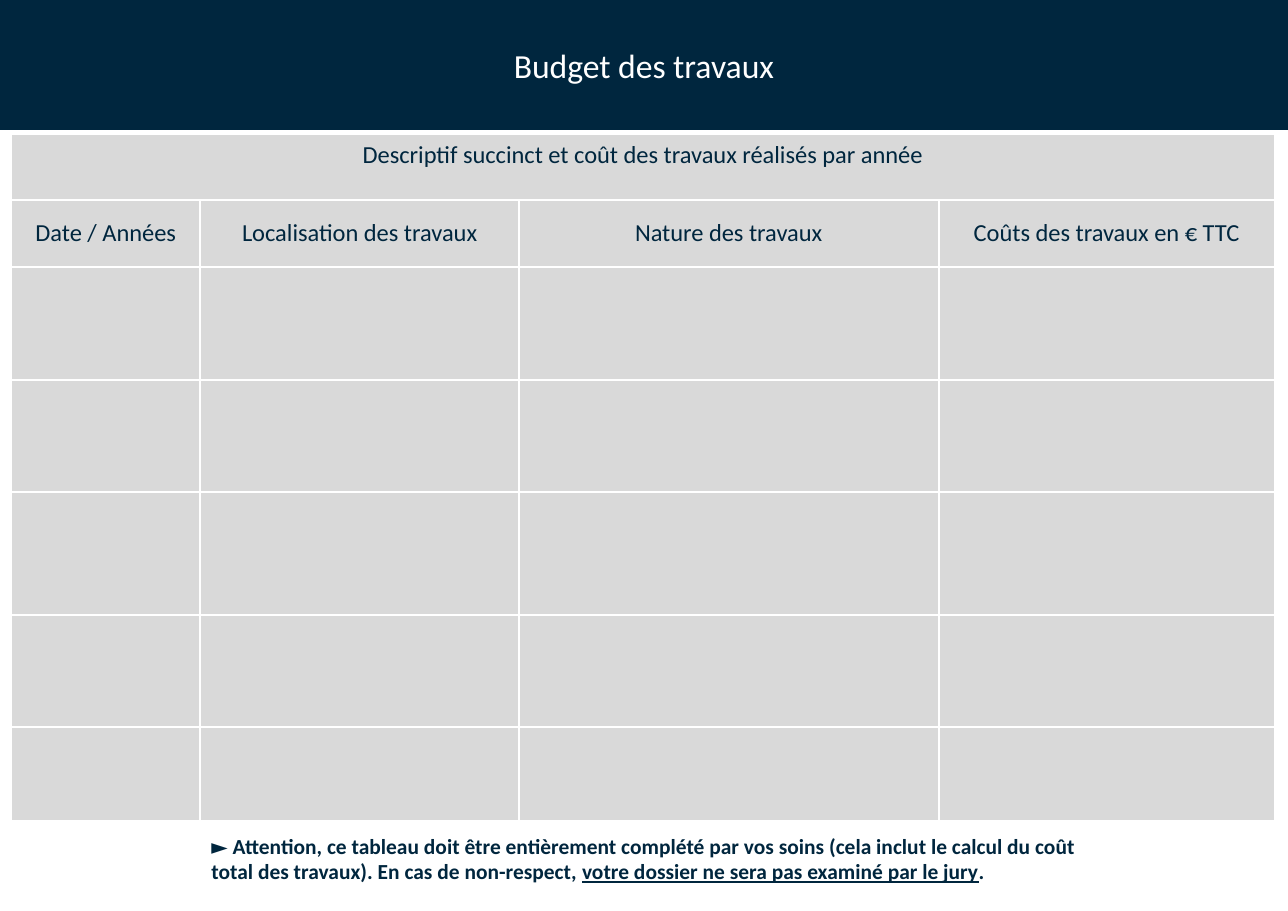
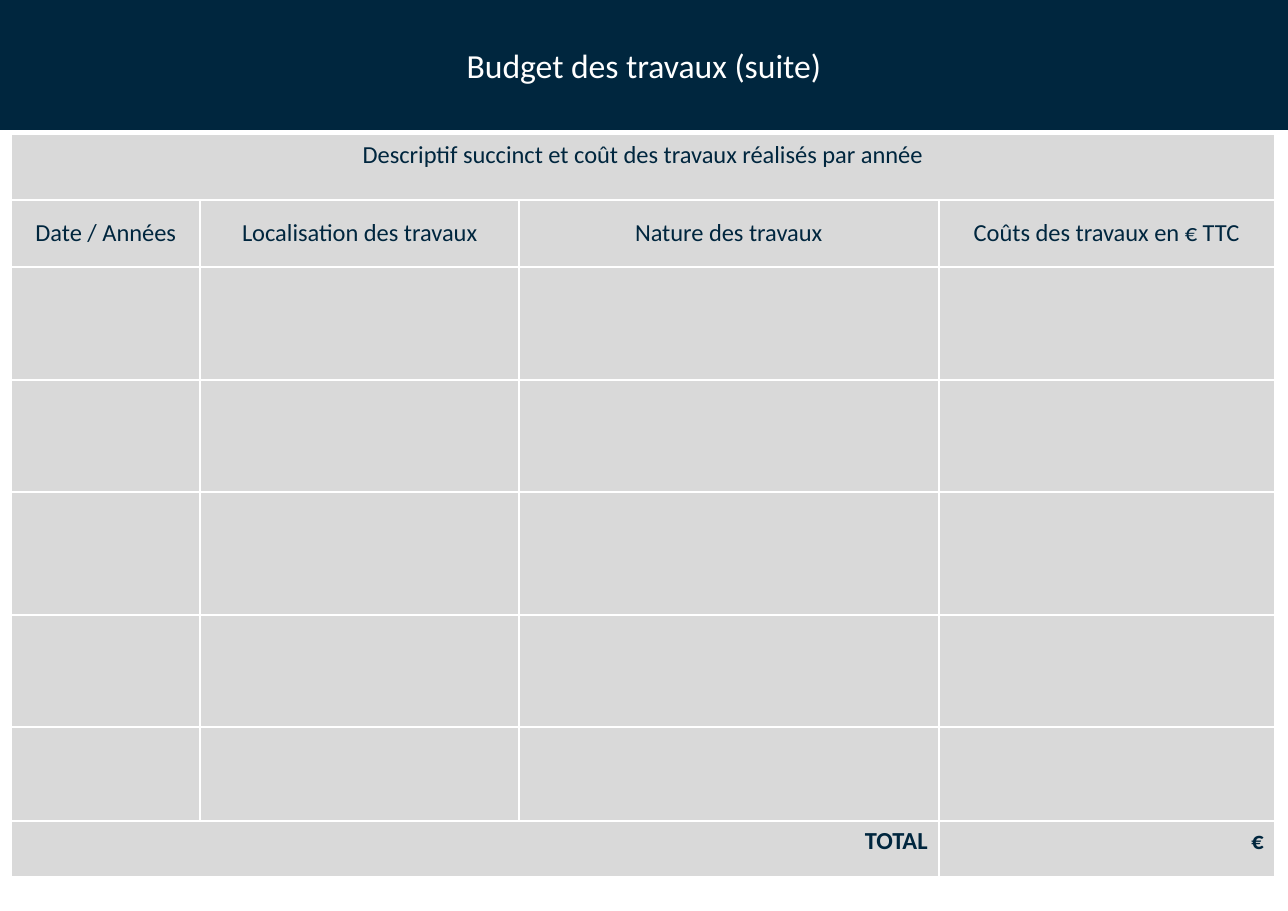
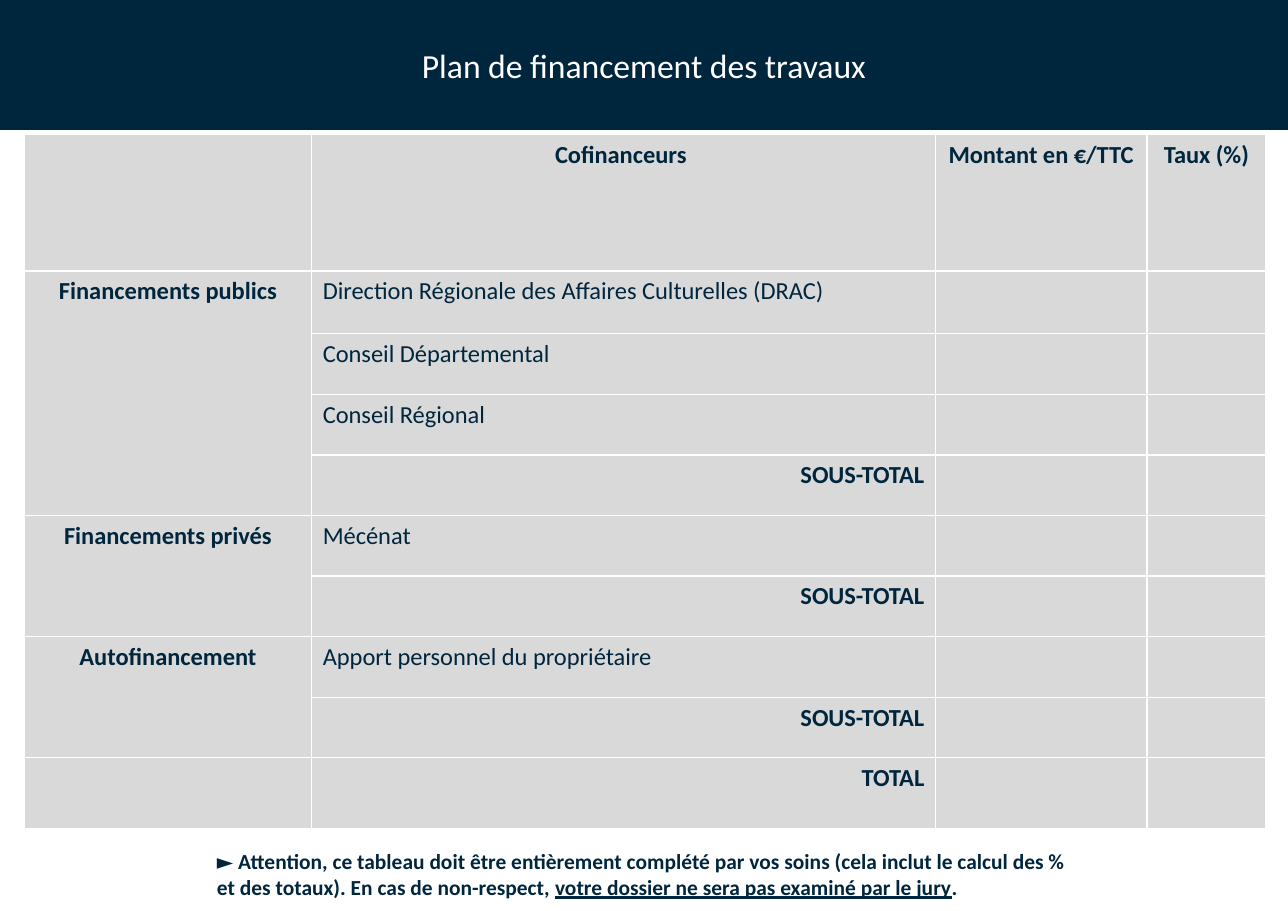
"""Build three slides of forms for the budget and the financing of works."""
from lxml import etree
from pptx import Presentation
from pptx.dml.color import RGBColor
from pptx.enum.text import MSO_ANCHOR as Anchor, MSO_AUTO_SIZE as AutoSize, PP_ALIGN as Align
from pptx.oxml.ns import qn
from pptx.util import Inches, Pt

COLOURS = {"navy": "00263E", "grey": "D9D9D9", "white": "FFFFFF"}
FONT = "Calibri"
PAGE_WIDTH, PAGE_HEIGHT = 11.69, 8.27
BAND_HEIGHT = 1.18
TABLE_TOP = 1.22


def format_runs(para, size, colour, bold=False):
    for span in para.runs:
        span.font.name = FONT
        span.font.size = Pt(size)
        span.font.bold = bold
        span.font.color.rgb = RGBColor.from_string(COLOURS[colour])


def add_form(page, left, widths, heights, border, merges, entries, middle_rows=()):
    frame = page.shapes.add_table(
        len(heights), len(widths), Inches(left), Inches(TABLE_TOP),
        Inches(sum(widths)), Inches(sum(heights)))
    table = frame.table
    for column, width in zip(table.columns, widths):
        column.width = Inches(width)
    for row, height in zip(table.rows, heights):
        row.height = Inches(height)
    for first, last in merges:
        table.cell(*first).merge(table.cell(*last))
    for cell in table.iter_cells():
        cell.fill.solid()
        cell.fill.fore_color.rgb = RGBColor.from_string(COLOURS["grey"])
        properties = cell._tc.get_or_add_tcPr()
        for index, side in enumerate(("a:lnL", "a:lnR", "a:lnT", "a:lnB")):
            line = etree.Element(qn(side), w=str(Pt(border)))
            fill = etree.SubElement(line, qn("a:solidFill"))
            etree.SubElement(fill, qn("a:srgbClr"), val=COLOURS["white"])
            properties.insert(index, line)
    for (row, column), (text, align, bold) in entries.items():
        cell = table.cell(row, column)
        cell.vertical_anchor = Anchor.MIDDLE if row in middle_rows else Anchor.TOP
        para = cell.text_frame.paragraphs[0]
        para.text = text
        para.alignment = align
        format_runs(para, 16, "navy", bold)


deck = Presentation()
deck.slide_width = Inches(PAGE_WIDTH)
deck.slide_height = Inches(PAGE_HEIGHT)

pages = []
for heading in ("Budget des travaux", "Budget des travaux (suite)", "Plan de financement des travaux"):
    page = deck.slides.add_slide(deck.slide_layouts[5])
    title = page.shapes.title
    title.left, title.top = Inches(0), Inches(0)
    title.width, title.height = Inches(PAGE_WIDTH), Inches(BAND_HEIGHT)
    title.fill.solid()
    title.fill.fore_color.rgb = RGBColor.from_string(COLOURS["navy"])
    title.text_frame.text = heading
    title.text_frame.auto_size = AutoSize.NONE
    title.text_frame.vertical_anchor = Anchor.MIDDLE
    title.text_frame.paragraphs[0].alignment = Align.CENTER
    format_runs(title.text_frame.paragraphs[0], 22, "white")
    pages.append(page)
budget_page, budget_next_page, financing_page = pages

budget_widths = [1.72, 2.89, 3.81, 3.05]
budget_heights = [0.6, 0.6, 1.03, 1.02, 1.11, 1.02, 0.85]
budget_merges = [((0, 0), (0, 3))]
budget_entries = {(0, 0): ("Descriptif succinct et coût des travaux réalisés par année", Align.CENTER, False)}
column_names = ["Date / Années", "Localisation des travaux", "Nature des travaux", "Coûts des travaux en € TTC"]
for column, name in enumerate(column_names):
    budget_entries[1, column] = (name, Align.CENTER, False)
total_row = len(budget_heights)
total_entries = {
    (total_row, 0): ("TOTAL", Align.RIGHT, True),
    (total_row, 3): ("€", Align.RIGHT, True),
}
add_form(budget_page, 0.1, budget_widths, budget_heights, 1.5,
         budget_merges, budget_entries, middle_rows=(1,))
add_form(budget_next_page, 0.1, budget_widths, budget_heights + [0.51], 1.5,
         budget_merges + [((total_row, 0), (total_row, 2))],
         budget_entries | total_entries, middle_rows=(1,))

financing_groups = [
    ("Financements publics", ["Direction Régionale des Affaires Culturelles (DRAC)",
                              "Conseil Départemental", "Conseil Régional"]),
    ("Financements privés", ["Mécénat"]),
    ("Autofinancement", ["Apport personnel du propriétaire"]),
]
financing_entries = {}
for column, name in enumerate(["Cofinanceurs ", "Montant en €/TTC", "Taux (%)"], start=1):
    financing_entries[0, column] = (name, Align.CENTER, True)
financing_merges = []
row = 1
for group, funders in financing_groups:
    subtotal_row = row + len(funders)
    financing_merges.append(((row, 0), (subtotal_row, 0)))
    financing_entries[row, 0] = (group, Align.CENTER, True)
    for offset, funder in enumerate(funders):
        financing_entries[row + offset, 1] = (funder, Align.LEFT, False)
    financing_entries[subtotal_row, 1] = ("SOUS-TOTAL", Align.RIGHT, True)
    row = subtotal_row + 1
financing_entries[row, 1] = ("TOTAL", Align.RIGHT, True)
add_form(financing_page, 0.22, [2.61, 5.66, 1.92, 1.08], [1.24, 0.57] + [0.55] * 7 + [0.64],
         0.96, financing_merges, financing_entries)

notes = [
    (budget_page, 1.82, 7.51, 8.06, "du coût total des travaux"),
    (financing_page, 1.87, 7.65, 7.95, "des % et des totaux"),
]
for page, left, top, width, subject in notes:
    box = page.shapes.add_textbox(Inches(left), Inches(top), Inches(width), Inches(0.57))
    box.text_frame.word_wrap = True
    box.text_frame.auto_size = AutoSize.SHAPE_TO_FIT_TEXT
    para = box.text_frame.paragraphs[0]
    warning = ("► Attention, ce tableau doit être entièrement complété par vos soins "
               f"(cela inclut le calcul {subject}). En cas de non-respect, ")
    for text in (warning, "votre dossier ne sera pas examiné par le jury", "."):
        para.add_run().text = text
    format_runs(para, 14, "navy", bold=True)
    para.runs[1].font.underline = True

deck.save("out.pptx")
